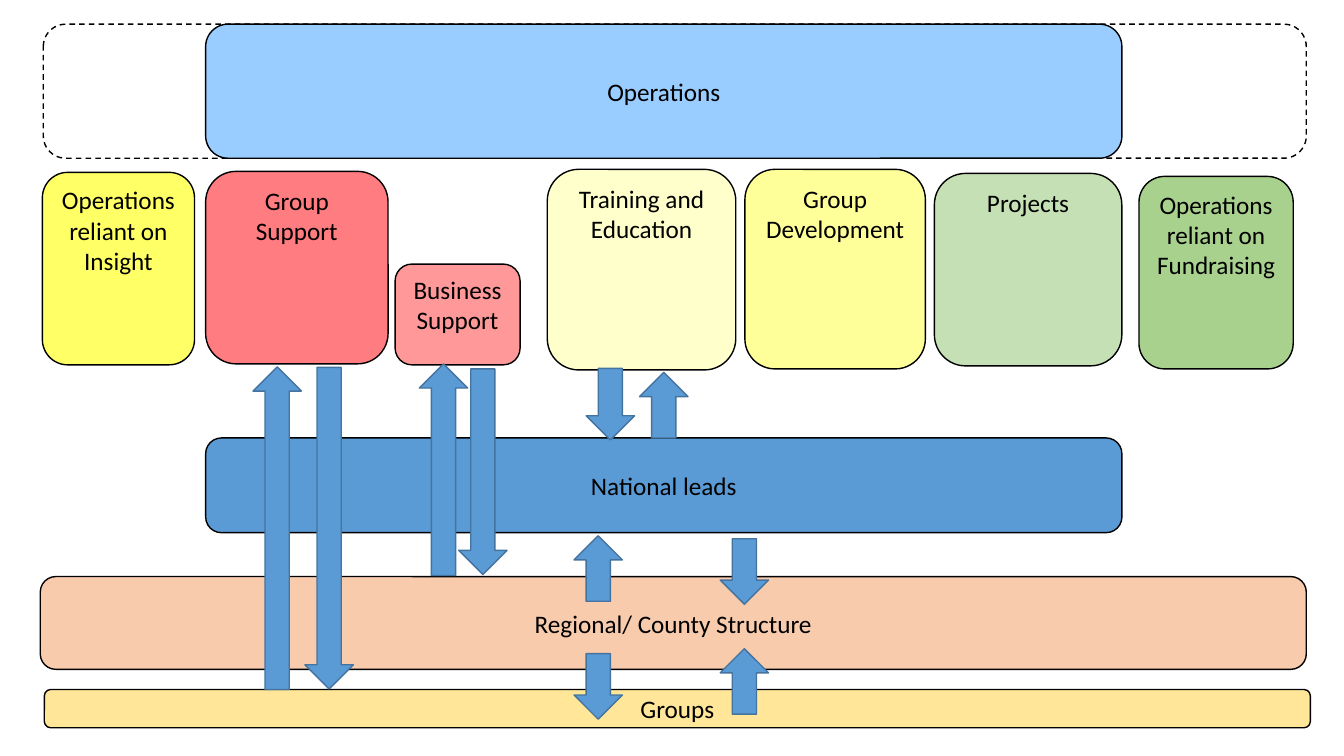
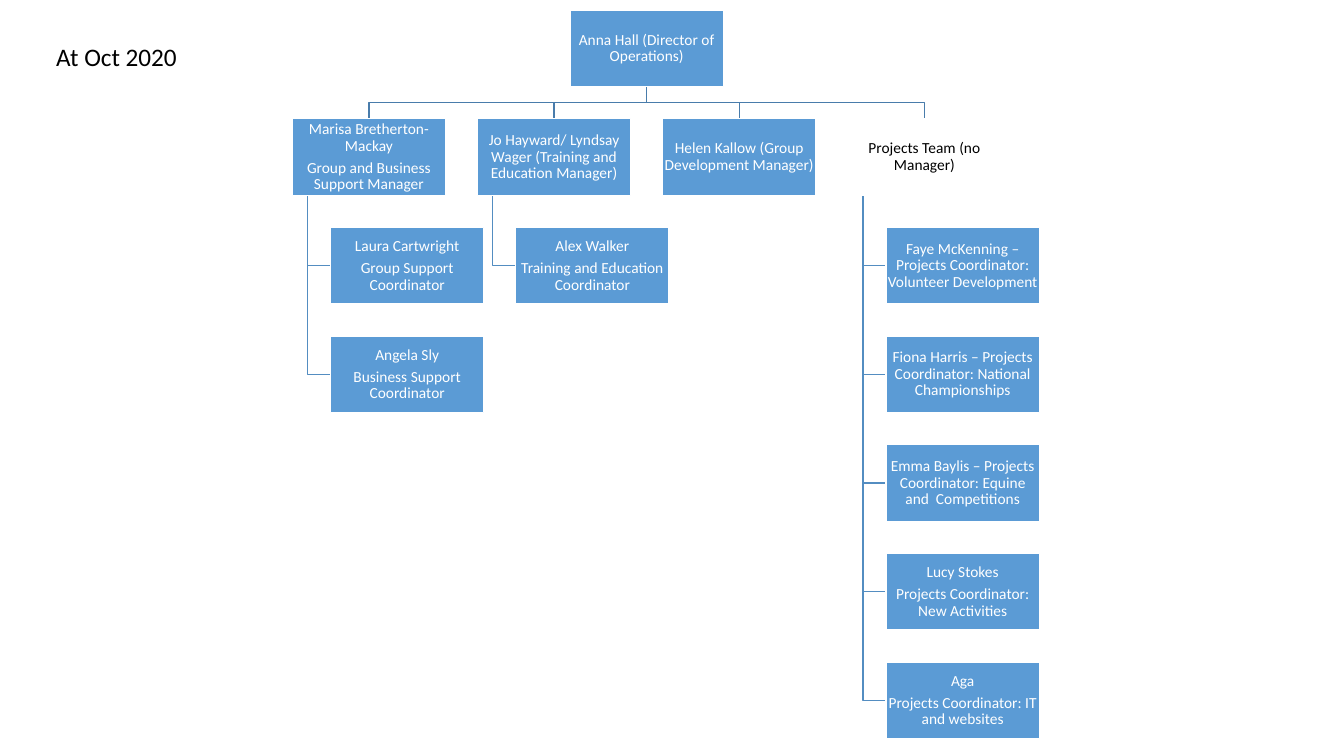
import pptx
import pptx.dml.color
import pptx.enum.dml
import pptx.enum.shapes
import pptx.enum.text
import pptx.util

SHAPE = pptx.enum.shapes.MSO_SHAPE
ANCHOR = pptx.enum.text.MSO_ANCHOR
ALIGN = pptx.enum.text.PP_ALIGN

COLORS = {
    "black": "000000", "white": "FFFFFF", "blue": "5B9BD5", "sky": "99CCFF",
    "arrow_line": "43739E", "bus": "497CAB", "branch": "538DC1",
    "red": "FF7C80", "pink": "FF9999", "yellow": "FFFF66",
    "cream": "FFFFCC", "lemon": "FFFF99", "mint": "C5E0B4",
    "green": "A9D18E", "peach": "F8CBAD", "gold": "FFE699",
}
FONT = "Calibri"
CELL = 0.1  # grid column width and row height, in inches


def rgb(name):
    return pptx.dml.color.RGBColor.from_string(COLORS[name])


def grid(n):
    return pptx.util.Inches(n * CELL)


def write(tf, text, size=18, color="black", align=ALIGN.CENTER,
          anchor=ANCHOR.MIDDLE, inset=None, spacing=None, after=None):
    """Fill a text frame, one paragraph per line of text."""
    tf.word_wrap = True
    tf.vertical_anchor = anchor
    if inset is not None:
        tf.margin_left = tf.margin_right = grid(inset)
        tf.margin_top = tf.margin_bottom = grid(inset)
    for i, line in enumerate(text.split("\n")):
        p = tf.paragraphs[0] if i == 0 else tf.add_paragraph()
        p.alignment = align
        if spacing is not None:
            p.line_spacing = spacing
        if after is not None:
            p.space_after = pptx.util.Pt(after)
        r = p.add_run()
        r.text = line
        r.font.name = FONT
        r.font.size = pptx.util.Pt(size)
        r.font.color.rgb = rgb(color)


class Deck:
    """Holds the presentation, its style and the current slide."""

    def __init__(self):
        self.prs = pptx.Presentation()
        self.prs.slide_width = pptx.util.Inches(7.5 * 16 / 9)
        self.prs.slide_height = pptx.util.Inches(7.5)
        self.s = None

    def new_slide(self):
        self.s = self.prs.slides.add_slide(self.prs.slide_layouts[6])

    def paint(self, sp, fill, line):
        sp.shadow.inherit = False
        if fill:
            sp.fill.solid()
            sp.fill.fore_color.rgb = rgb(fill)
        else:
            sp.fill.background()
        sp.line.color.rgb = rgb(line)
        sp.line.width = pptx.util.Pt(1)

    def shape(self, kind, at, fill=None, line="black", dash=False):
        sp = self.s.shapes.add_shape(kind, *map(grid, at))
        self.paint(sp, fill, line)
        if dash:
            sp.line.dash_style = pptx.enum.dml.MSO_LINE.DASH
        return sp

    def panel(self, text, at, fill, anchor=ANCHOR.MIDDLE):
        sp = self.shape(SHAPE.ROUNDED_RECTANGLE, at, fill)
        write(sp.text_frame, text, anchor=anchor)

    def arrow(self, kind, center, top, height):
        width = 4.8
        self.shape(kind, (center - width / 2, top, width, height),
                   "blue", "arrow_line")

    def org_box(self, text, at, fill="blue", color="white"):
        sp = self.shape(SHAPE.RECTANGLE, at, fill, "white")
        write(sp.text_frame, text, size=11, color=color, inset=0.1,
              spacing=0.9, after=3.85)

    def bent_line(self, points, color):
        """Open outline through the points."""
        start, *rest = [tuple(map(grid, point)) for point in points]
        outline = self.s.shapes.build_freeform(*start)
        outline.add_line_segments(rest, close=False)
        self.paint(outline.convert_to_shape(), None, color)

    def label(self, text, at):
        tb = self.s.shapes.add_textbox(*map(grid, at))
        write(tb.text_frame, text, align=ALIGN.LEFT, anchor=ANCHOR.TOP)


TEAMS = [
    ("Group Support", (20.4, 17, 18.1, 19.1), "red"),
    ("Operations reliant on Insight", (4.2, 17.1, 15.1, 19.1), "yellow"),
    ("Training and Education", (54.3, 16.8, 18.7, 19.9), "cream"),
    ("Projects", (92.7, 17.2, 18.6, 19.1), "mint"),
    ("Group Development", (73.9, 16.8, 17.9, 19.8), "lemon"),
    ("Business Support", (39.2, 26.2, 12.4, 10), "pink"),
    ("Operations reliant on Fundraising", (113, 17.5, 15.3, 19.1), "green"),
]
BANDS = [
    ("Operations", (20.4, 2.4, 90.9, 13.3), "sky"),
    ("Regional/ County Structure", (4, 57.2, 125.6, 9.2), "peach"),
    ("National leads", (20.4, 43.45, 90.9, 9.4), "blue"),
    ("Groups", (4.4, 68.4, 125.6, 3.8), "gold"),
]
UP, DOWN = SHAPE.UP_ARROW, SHAPE.DOWN_ARROW
ARROWS = [  # direction, centre column, top row, height
    (UP, 27.5, 36.4, 32), (DOWN, 32.65, 36.45, 31.9),
    (UP, 44, 36.1, 21), (DOWN, 47.9, 36.6, 20.4),
    (DOWN, 60.55, 36.55, 7.1), (UP, 65.85, 36.95, 6.5),
    (UP, 59.35, 53.15, 6.5), (DOWN, 73.85, 53.45, 6.5),
    (DOWN, 59.35, 64.85, 6.5), (UP, 73.85, 64.35, 6.5),
]


def structure_slide(deck):
    deck.new_slide()
    for text, at, fill in TEAMS:
        deck.panel(text, at, fill, ANCHOR.TOP)
    # Dashed outline behind the operations band
    deck.shape(SHAPE.ROUNDED_RECTANGLE, (4.3, 2.4, 125.3, 13.3), dash=True)
    for text, at, fill in BANDS:
        deck.panel(text, at, fill)
    for arrow in ARROWS:
        deck.arrow(*arrow)


DIRECTOR = "Anna Hall (Director of Operations)"
VACANT = "Projects Team (no Manager)"
MANAGERS = [  # manager, then the people who report to them
    ("Marisa Bretherton-Mackay\nGroup and Business Support Manager",
     ["Laura Cartwright\nGroup Support Coordinator",
      "Angela Sly\nBusiness Support Coordinator"]),
    ("Jo Hayward/ Lyndsay Wager (Training and Education Manager)",
     ["Alex Walker\nTraining and Education Coordinator"]),
    ("Helen Kallow (Group Development Manager)", []),
    (VACANT,
     ["Faye McKenning – Projects Coordinator: Volunteer Development",
      "Fiona Harris – Projects Coordinator: National Championships",
      "Emma Baylis – Projects Coordinator: Equine and  Competitions",
      "Lucy Stokes\nProjects Coordinator: New Activities",
      "Aga\nProjects Coordinator: IT and websites"]),
]


def org_slide(deck):
    deck.new_slide()
    left, top, width, height = 29, 1, 15.2, 7.6
    col_step, row_step = 18.37, 10.78
    indent, trunk_inset = width / 4, width / 10

    def row(n):
        return top + n * row_step

    middle = left + (len(MANAGERS) - 1) * col_step / 2
    stem = middle + width / 2
    bus = (top + height + row(1)) / 2
    columns = [left + i * col_step for i in range(len(MANAGERS))]

    # Lines first, so that the boxes lie over their ends
    for x, (name, reports) in zip(columns, MANAGERS):
        drop, trunk = x + width / 2, x + trunk_inset
        deck.bent_line([(stem, top + height), (stem, bus), (drop, bus),
                        (drop, row(1))], "bus")
        for j in range(2, len(reports) + 2):
            y = row(j) + height / 2
            deck.bent_line([(trunk, row(1) + height), (trunk, y),
                            (x + indent, y)], "branch")

    # Director, managers and their reports
    deck.org_box(DIRECTOR, (middle, top, width, height))
    for x, (name, reports) in zip(columns, MANAGERS):
        style = {"fill": None, "color": "black"} if name == VACANT else {}
        deck.org_box(name, (x, row(1), width, height), **style)
        for j, report in enumerate(reports, 2):
            deck.org_box(report, (x + indent, row(j), width, height))

    deck.label("At Oct 2020", (4.6, 3.6, 33.3, 4))


def main():
    deck = Deck()
    structure_slide(deck)
    org_slide(deck)
    deck.prs.save("out.pptx")


if __name__ == "__main__":
    main()
